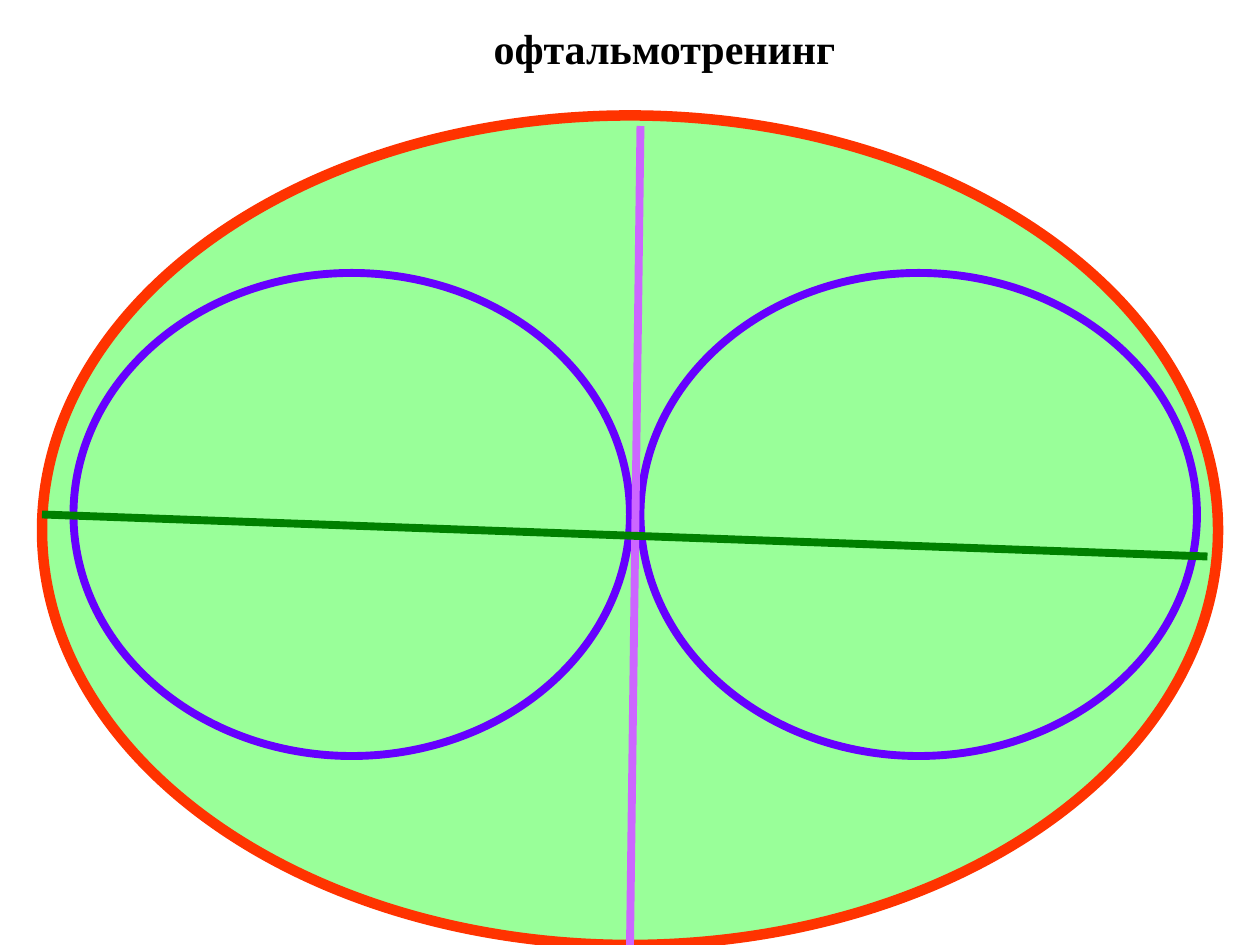
from pptx import Presentation
from pptx.dml.color import RGBColor
from pptx.enum.shapes import MSO_CONNECTOR, MSO_SHAPE
from pptx.enum.text import MSO_AUTO_SIZE
from pptx.oxml.ns import qn
from pptx.util import Pt
from lxml.etree import SubElement


def rgb(value):
    return RGBColor.from_string(value)


def set_line(s, color, weight):
    s.line.color.rgb = rgb(color)
    s.line.width = Pt(weight)


def add_ellipse(slide, left, top, width, height, color, weight):
    s = slide.shapes.add_shape(
        MSO_SHAPE.OVAL, Pt(left), Pt(top), Pt(width), Pt(height))
    s.shadow.inherit = False
    s.fill.solid()
    s.fill.fore_color.rgb = rgb("99FF99")
    set_line(s, color, weight)


def add_line(slide, x1, y1, x2, y2, color):
    s = slide.shapes.add_connector(
        MSO_CONNECTOR.STRAIGHT, Pt(x1), Pt(y1), Pt(x2), Pt(y2))
    set_line(s, color, 4.5)
    SubElement(s._element.spPr, qn("a:effectLst"))


def add_title(slide, text, left, top, width, height):
    s = slide.shapes.add_textbox(Pt(left), Pt(top), Pt(width), Pt(height))
    tf = s.text_frame
    tf.text = text
    tf.word_wrap = False
    tf.auto_size = MSO_AUTO_SIZE.SHAPE_TO_FIT_TEXT
    p = tf.paragraphs[0]
    p.space_before = Pt(12)
    font = p.runs[0].font
    font.name = "Times New Roman"
    font.size = Pt(24)
    font.bold = True
    font.color.rgb = rgb("000000")


def main():
    prs = Presentation()
    prs.slide_width, prs.slide_height = Pt(720), Pt(540)
    slide = prs.slides.add_slide(prs.slide_layouts[6])

    add_ellipse(slide, 24, 66, 672, 474, "FF3300", 6)
    for left in (42, 366):
        add_ellipse(slide, left, 156, 318, 276, "6600FF", 4.5)
    add_line(slide, 366, 72, 360, 540, "CC66FF")
    add_line(slide, 24, 294, 690, 318, "008000")
    add_title(slide, "офтальмотренинг", 275, 9.4, 219, 37.4)

    prs.save("out.pptx")


if __name__ == "__main__":
    main()
